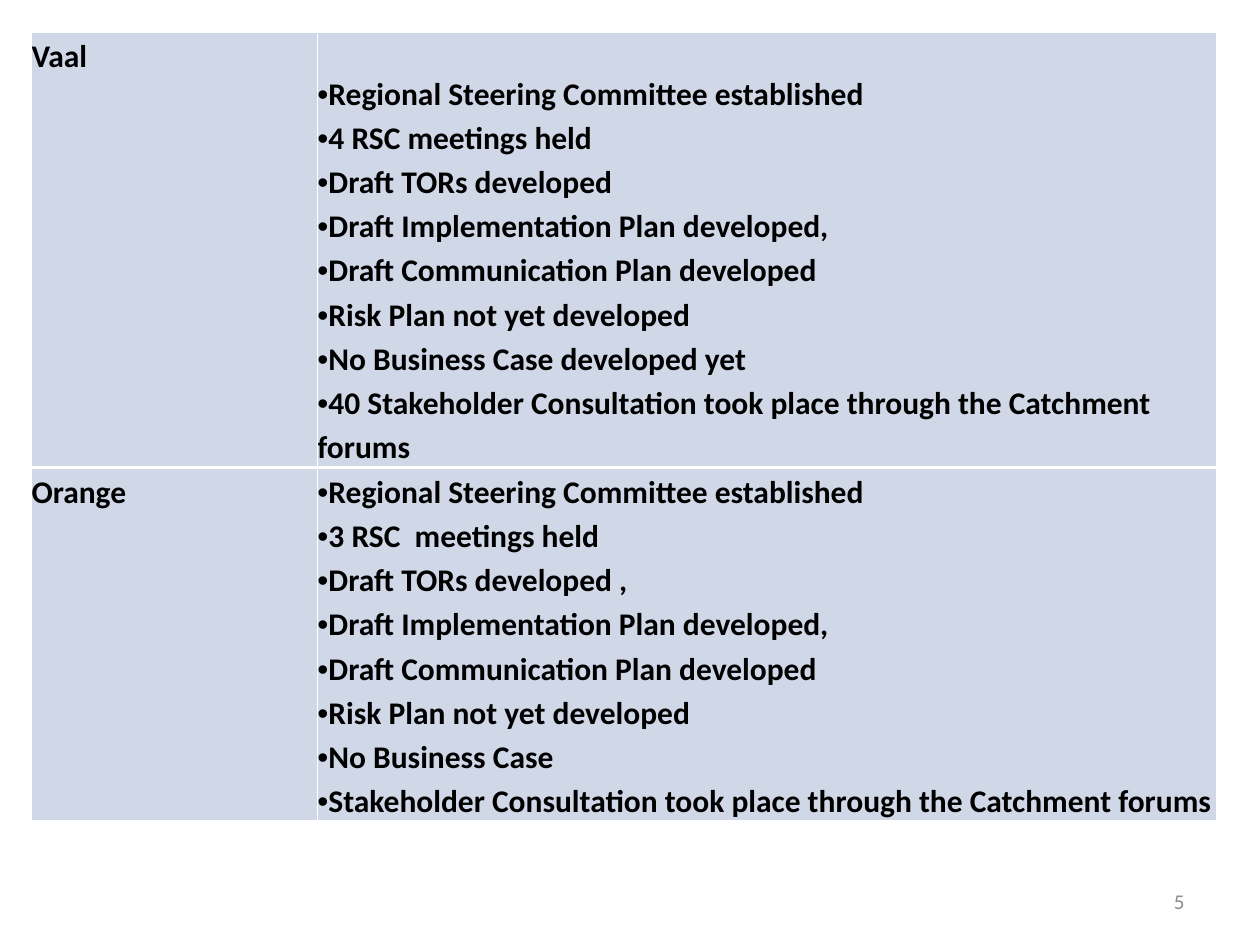
import pptx
import pptx.dml.color
import pptx.enum.text
import pptx.oxml
import pptx.oxml.ns
import pptx.util
from lxml import etree

Inches, Pt = pptx.util.Inches, pptx.util.Pt
RGB = pptx.dml.color.RGBColor
BLACK, WHITE = RGB(0, 0, 0), RGB(255, 255, 255)
CELL_BLUE, GREY = RGB(0xD0, 0xD8, 0xE8), RGB(0x8C, 0x8C, 0x8C)
FONT, BULLET_FONT = "Calibri", "Arial"
BORDERS = {"lnL": 1, "lnR": 1, "lnT": 2.25, "lnB": 2.25}
COLUMN_WIDTHS = [2.27, 7.14]

# Region, row height, gap above the list, progress items
REGIONS = [
    ("Vaal", 3.46, 0.3, [
        "Regional Steering Committee established",
        "4 RSC meetings held",
        "Draft TORs developed",
        "Draft Implementation Plan developed,",
        "Draft Communication Plan developed",
        "Risk Plan not yet developed",
        "No Business Case developed yet",
        "40 Stakeholder Consultation took place through the Catchment forums",
    ]),
    ("Orange", 2.81, 0, [
        "Regional Steering Committee established",
        "3 RSC  meetings held",
        "Draft TORs developed ,",
        "Draft Implementation Plan developed,",
        "Draft Communication Plan developed",
        "Risk Plan not yet developed",
        "No Business Case",
        "Stakeholder Consultation took place through the Catchment forums",
    ]),
]


def set_font(run, size, color, bold=False):
    font = run.font
    font.name, font.size, font.bold = FONT, Pt(size), bold
    font.color.rgb = color


def add_borders(cell):
    """Put white lines before the fill, in the order the schema asks for."""
    tc_pr = cell._tc.get_or_add_tcPr()
    for i, (side, width) in enumerate(BORDERS.items()):
        line = pptx.oxml.parse_xml(
            f'<a:{side} {pptx.oxml.ns.nsdecls("a")} w="{Pt(width)}">'
            f'<a:solidFill><a:srgbClr val="{WHITE}"/></a:solidFill></a:{side}>')
        tc_pr.insert(i, line)


def add_bullet(p):
    p_pr = p._p.get_or_add_pPr()
    etree.SubElement(p_pr, pptx.oxml.ns.qn("a:buFont"), typeface=BULLET_FONT)
    etree.SubElement(p_pr, pptx.oxml.ns.qn("a:buChar"), char="•")


def fill_cell(cell, lines, bullets=False, top=0):
    cell.margin_left = cell.margin_right = cell.margin_bottom = 0
    cell.margin_top = Inches(top)
    cell.fill.solid()
    cell.fill.fore_color.rgb = CELL_BLUE
    add_borders(cell)
    tf = cell.text_frame
    tf.text = "\n".join(lines)
    for p in tf.paragraphs:
        p.line_spacing = 1.15
        if bullets:
            add_bullet(p)
        set_font(p.runs[0], 18, BLACK, bold=True)


def add_region_table(slide, left, top):
    height = sum(region[1] for region in REGIONS)
    table = slide.shapes.add_table(
        len(REGIONS), len(COLUMN_WIDTHS), Inches(left), Inches(top),
        Inches(sum(COLUMN_WIDTHS)), Inches(height)).table
    table.first_row = table.horz_banding = False
    for column, width in zip(table.columns, COLUMN_WIDTHS):
        column.width = Inches(width)
    for i, (name, row_height, gap, items) in enumerate(REGIONS):
        table.rows[i].height = Inches(row_height)
        fill_cell(table.cell(i, 0), [name])
        fill_cell(table.cell(i, 1), items, bullets=True, top=gap)


def add_page_number(slide, left, top, width, height):
    box = slide.shapes.add_textbox(*map(Inches, (left, top, width, height)))
    tf = box.text_frame
    tf.word_wrap = True
    tf.vertical_anchor = pptx.enum.text.MSO_ANCHOR.MIDDLE
    tf.text = "5"
    p = tf.paragraphs[0]
    p.alignment = pptx.enum.text.PP_ALIGN.RIGHT
    set_font(p.runs[0], 12, GREY)


def main():
    prs = pptx.Presentation()
    prs.slide_width, prs.slide_height = Inches(10), Inches(7.5)
    slide = prs.slides.add_slide(prs.slide_layouts[6])
    add_page_number(slide, 7.17, 6.95, 2.33, 0.4)
    add_region_table(slide, 0.25, 0.25)
    prs.save("out.pptx")


if __name__ == "__main__":
    main()
